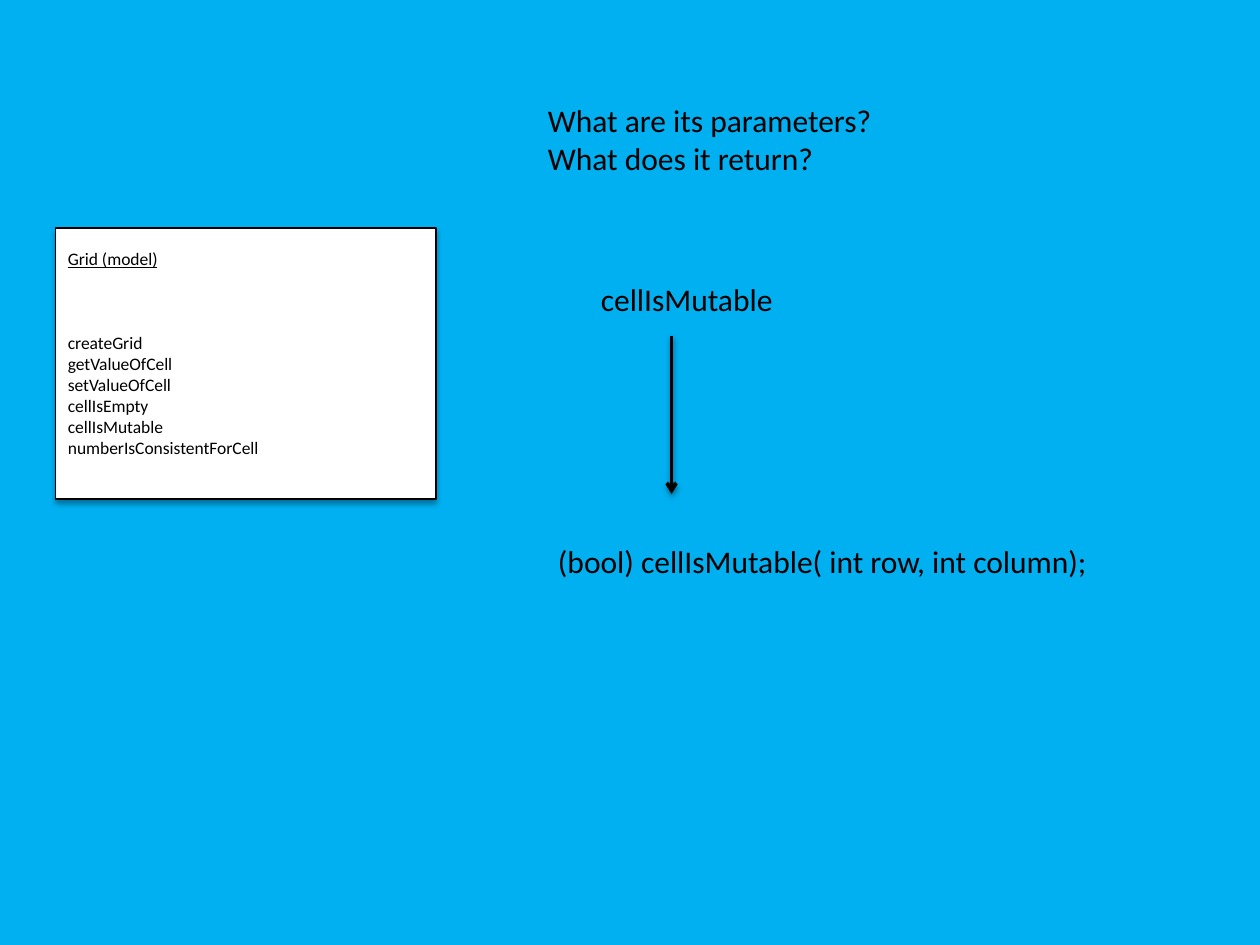
from lxml import etree
from pptx import Presentation
from pptx.dml.color import RGBColor
from pptx.enum.shapes import MSO_CONNECTOR, MSO_SHAPE
from pptx.enum.text import MSO_ANCHOR, MSO_AUTO_SIZE, PP_ALIGN
from pptx.oxml import parse_xml
from pptx.oxml.ns import nsdecls, qn
from pptx.util import Inches, Pt

STRAIGHT = MSO_CONNECTOR.STRAIGHT
RECTANGLE = MSO_SHAPE.RECTANGLE
TOP = MSO_ANCHOR.TOP
GROW = MSO_AUTO_SIZE.SHAPE_TO_FIT_TEXT
LEFT = PP_ALIGN.LEFT

SKY = RGBColor(0x00, 0xB0, 0xF0)
WHITE = RGBColor(0xFF, 0xFF, 0xFF)
BLACK = RGBColor(0x00, 0x00, 0x00)
FONT = "Calibri"

METHODS = ["createGrid", "getValueOfCell", "setValueOfCell", "cellIsEmpty",
           "cellIsMutable", "numberIsConsistentForCell"]


def write_lines(tf, lines, size):
    for i, line in enumerate(lines):
        p = tf.paragraphs[0] if i == 0 else tf.add_paragraph()
        p.text = line
        p.alignment = LEFT
        p.font.name, p.font.size = FONT, Pt(size)
        p.font.color.rgb = BLACK


def add_shadow(shape, distance, opacity):
    """Soft black shadow straight below; distance in points, opacity in percent."""
    shape._element.spPr.append(parse_xml(
        f'<a:effectLst {nsdecls("a")}>'
        f'<a:outerShdw blurRad="{Pt(3.1)}" dist="{Pt(distance)}" dir="5400000" rotWithShape="0">'
        f'<a:srgbClr val="{BLACK}"><a:alpha val="{opacity * 1000}"/></a:srgbClr>'
        '</a:outerShdw></a:effectLst>'))


def add_label(s, lines, left, top, width, height):
    sp = s.shapes.add_textbox(Inches(left), Inches(top), Inches(width), Inches(height))
    tf = sp.text_frame
    tf.word_wrap = False
    tf.auto_size = GROW
    write_lines(tf, lines, 18)


def add_class_card(s, title, methods, left, top, width, height):
    sp = s.shapes.add_shape(RECTANGLE, Inches(left), Inches(top),
                            Inches(width), Inches(height))
    sp.fill.solid()
    sp.fill.fore_color.rgb = WHITE
    sp.line.color.rgb = BLACK
    sp.line.width = Pt(0.75)
    add_shadow(sp, 1.8, 35)

    tf = sp.text_frame
    tf.word_wrap = True
    tf.vertical_anchor = TOP
    tf.margin_top = Inches(0.16)
    write_lines(tf, [title, *methods], 10)
    heading = tf.paragraphs[0]
    heading.font.underline = True
    heading.runs[0].font.underline = True
    heading.space_after = Pt(36)


def add_down_arrow(s, x, top, height):
    line = s.shapes.add_connector(STRAIGHT, Inches(x), Inches(top),
                                  Inches(x), Inches(top + height))
    line.line.color.rgb = BLACK
    line.line.width = Pt(2)
    etree.SubElement(line.line._get_or_add_ln(), qn("a:tailEnd"), type="arrow")
    add_shadow(line, 1.6, 38)


def add_signature_steps(s, left, top):
    """Questions, method name, arrow and full signature, from top to bottom."""
    add_label(s, ["What are its parameters?", "What does it return?"],
              left, top, 2.82, 0.71)
    add_label(s, ["cellIsMutable"], left + 0.42, top + 1.42, 1.58, 0.4)
    add_down_arrow(s, left + 1.08, top + 1.92, 1.25)
    add_label(s, ["(bool) cellIsMutable( int row, int column);"],
              left + 0.08, top + 3.5, 4.48, 0.4)


def main():
    prs = Presentation()
    prs.slide_width, prs.slide_height = Inches(10), Inches(7.5)
    s = prs.slides.add_slide(prs.slide_layouts[6])
    s.background.fill.solid()
    s.background.fill.fore_color.rgb = SKY

    add_signature_steps(s, 4.25, 0.75)
    add_class_card(s, "Grid (model)", METHODS, 0.44, 1.81, 3.02, 2.15)
    prs.save("out.pptx")


if __name__ == "__main__":
    main()
